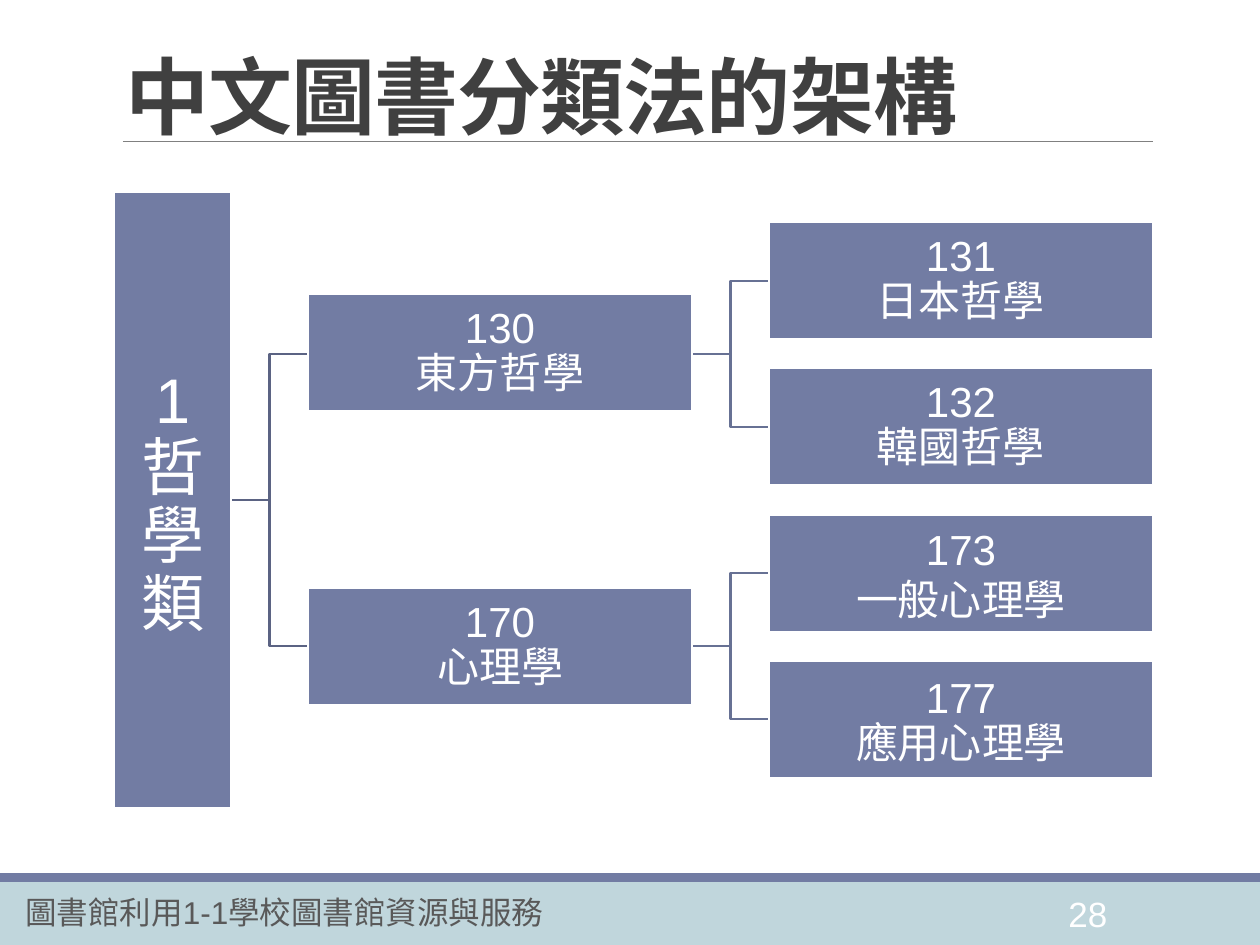
"""Build the slide on the structure of the Chinese library classification."""
from pptx import Presentation, util as u
from pptx.dml.color import RGBColor
from pptx.enum import shapes, text
from pptx.oxml import parse_xml
from pptx.oxml.ns import nsdecls, qn
from lxml import etree

PX = u.Inches(1) / 126
BOX_W, BOX_H = 384, 117
ROOT_X, BRANCH_X, LEAF_X = 114, 308, 769

deck = Presentation()
deck.slide_width, deck.slide_height = u.Inches(10), u.Inches(7.5)
slide = deck.slides.add_slide(deck.slide_layouts[6])


def place(box, lines, size, color, spacings, align=None, font="Arial", bold=False, inset=None):
    frame = box.text_frame
    frame.word_wrap = True
    frame.text = "\n".join(lines)
    if inset is not None:
        frame.margin_left = frame.margin_right = inset
        frame.margin_top = frame.margin_bottom = inset
    for paragraph, spacing in zip(frame.paragraphs, spacings):
        paragraph.alignment = align
        paragraph.line_spacing = spacing
        for run in paragraph.runs:
            run.font.size, run.font.bold, run.font.name = u.Pt(size), bold, font
            run.font.color.rgb = RGBColor.from_string(color)
            east_asian = parse_xml(f'<a:ea {nsdecls("a")} typeface="{font}"/>')
            run.font._element.find(qn("a:latin")).addnext(east_asian)


def connect(kind, start, end, color, width):
    line = slide.shapes.add_connector(kind, *(int(v * PX) for v in (*start, *end)))
    line.line.color.rgb = RGBColor.from_string(color)
    line.line.width = u.Pt(width)
    etree.SubElement(line._element.spPr, qn("a:effectLst"))


for top, height, color in [(882, 63, "C0D6DC"), (873, 9, "727CA3")]:
    band = slide.shapes.add_shape(shapes.MSO_SHAPE.RECTANGLE, 0, int(top * PX), deck.slide_width, int(height * PX))
    band.shadow.inherit = False
    band.fill.solid()
    band.fill.fore_color.rgb = RGBColor.from_string(color)
    band.line.fill.background()

connect(shapes.MSO_CONNECTOR.STRAIGHT, (123, 141), (1153, 141), "808080", 0.5)

labels = [
    ((113, 50, 1040, 102), "中文圖書分類法的架構", 48, "404040", 0.85, "Noto Sans CJK SC", True),
    ((13, 887, 586, 50), "圖書館利用1-1學校圖書館資源與服務", 18, "595959", 1.0, "Arial", False),
    ((1056, 886, 88, 50), "28", 20, "FFFFFF", 1.0, "Arial", False),
]
for area, words, size, color, spacing, font, bold in labels:
    label = slide.shapes.add_textbox(*(int(v * PX) for v in area))
    place(label, [words], size, color, [spacing], font=font, bold=bold)
    if bold:
        label.text_frame.vertical_anchor = text.MSO_ANCHOR.BOTTOM
        for run in label.text_frame.paragraphs[0].runs:
            run.font._element.set("spc", "-50")

links = [
    (ROOT_X + BOX_H, 500, BRANCH_X, (354, 646), "5B6383"),
    (BRANCH_X + BOX_W, 354, LEAF_X, (281, 427), "677194"),
    (BRANCH_X + BOX_W, 646, LEAF_X, (573, 719), "677194"),
]
for parent_x, parent_y, child_x, child_ys, color in links:
    for child_y in child_ys:
        connect(shapes.MSO_CONNECTOR.ELBOW, (parent_x, parent_y), (child_x, child_y), color, 1.25)

classes = [
    ((ROOT_X, 192, BOX_H, 616), ("1", "哲學類"), 36, (1.0, 0.9)),
    ((BRANCH_X, 294, BOX_W, BOX_H), ("130", "東方哲學"), 24, (0.9, 0.9)),
    ((BRANCH_X, 588, BOX_W, BOX_H), ("170", "心理學"), 24, (0.9, 0.9)),
    ((LEAF_X, 222, BOX_W, BOX_H), ("131", "日本哲學"), 24, (0.9, 0.9)),
    ((LEAF_X, 368, BOX_W, BOX_H), ("132", "韓國哲學"), 24, (0.9, 0.9)),
    ((LEAF_X, 515, BOX_W, BOX_H), ("173", "一般心理學"), 24, (1.0, 1.0)),
    ((LEAF_X, 661, BOX_W, BOX_H), ("177", "應用心理學"), 24, (1.0, 0.9)),
]
for area, lines, size, spacings in classes:
    box = slide.shapes.add_shape(shapes.MSO_SHAPE.RECTANGLE, *(int(v * PX) for v in area))
    box.shadow.inherit = False
    box.fill.solid()
    box.fill.fore_color.rgb = RGBColor.from_string("727CA3")
    box.line.color.rgb = RGBColor.from_string("FFFFFF")
    box.line.width = u.Pt(1.25)
    box.text_frame.vertical_anchor = text.MSO_ANCHOR.MIDDLE
    place(box, lines, size, "FFFFFF", spacings, text.PP_ALIGN.CENTER, inset=u.Inches(0.02))

deck.save("out.pptx")
